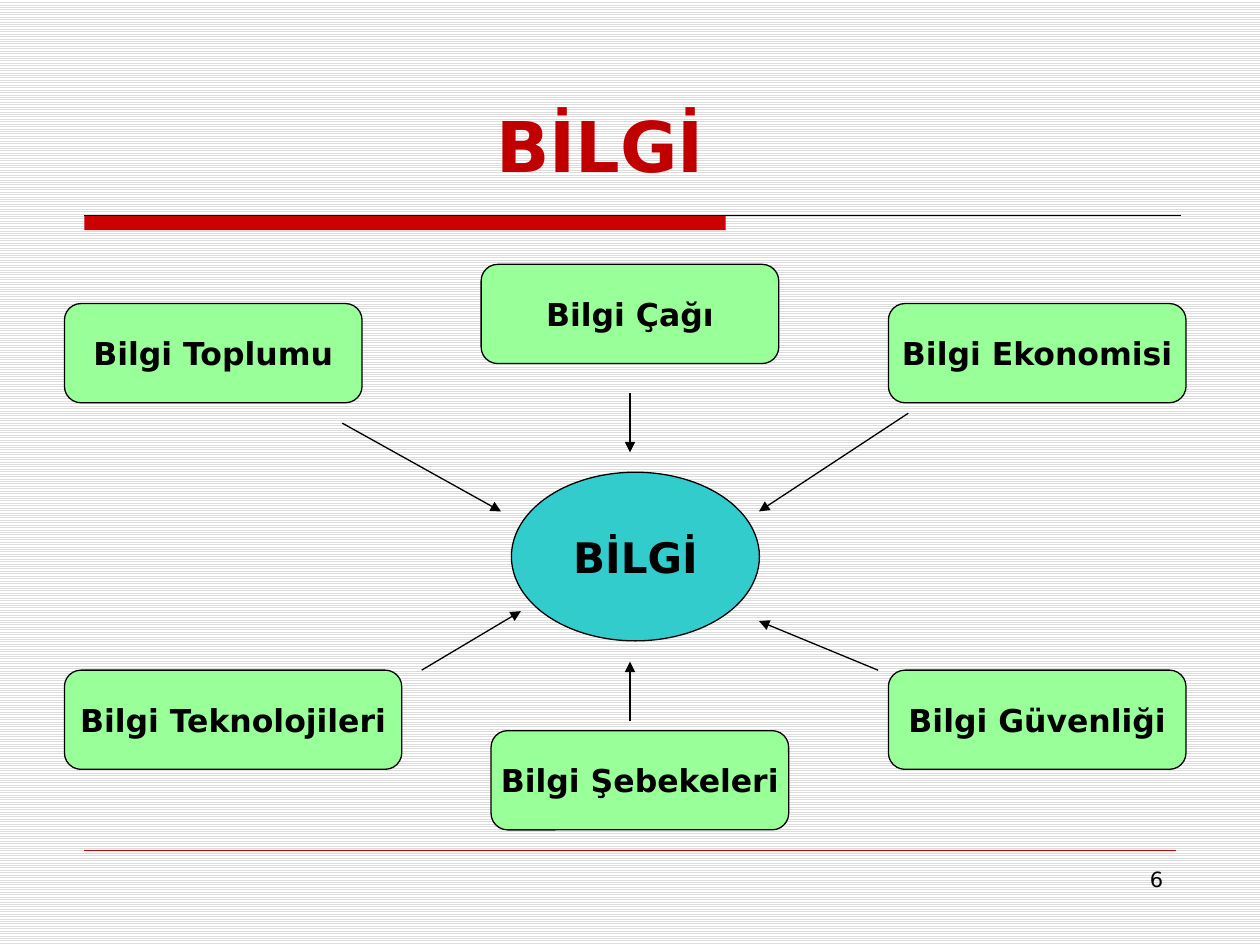
"""Builds the slide that links six information concepts to a central idea."""
from typing import NamedTuple

from lxml.etree import SubElement
from pptx import Presentation
from pptx.dml.color import RGBColor
from pptx.enum.dml import MSO_PATTERN
from pptx.enum.shapes import MSO_CONNECTOR, MSO_SHAPE
from pptx.enum.text import MSO_ANCHOR, PP_ALIGN
from pptx.oxml.ns import qn
from pptx.util import Cm, Pt

FONT = "DejaVu Sans"
COLORS = {
    "paper": "FFFFFF",
    "stripe": "DDDDDD",
    "accent": "CC0000",
    "title": "C00000",
    "concept": "99FF99",
    "core": "33CCCC",
    "ink": "000000",
}


class Node(NamedTuple):
    label: str
    left: float
    top: float
    width: float = 6.0
    height: float = 2.0
    shape: MSO_SHAPE = MSO_SHAPE.ROUNDED_RECTANGLE
    fill: str = "concept"
    size: int = 18


class Line(NamedTuple):
    start: tuple[float, float]
    end: tuple[float, float]
    color: str = "ink"
    weight: float = 0.75
    arrow: bool = True


LEFT, MIDDLE, RIGHT = 1.3, 12.7, 17.91
UPPER, LOWER = 6.12, 13.51
MARGIN = 1.7

NODES = [
    Node("Bilgi Toplumu", LEFT, UPPER),
    Node("Bilgi Çağı", 9.7, 5.33),
    Node("Bilgi Ekonomisi", RIGHT, UPPER),
    Node("Bilgi Teknolojileri", LEFT, LOWER, width=6.8),
    Node("Bilgi Şebekeleri", 9.9, 14.73),
    Node("Bilgi Güvenliği", RIGHT, LOWER),
    Node("BİLGİ", 10.31, 9.52, 5.0, 3.4, MSO_SHAPE.OVAL, "core", 24),
]
RULES = [
    Line((MARGIN, 4.34), (23.8, 4.34), arrow=False),
    Line((MARGIN, 17.15), (23.7, 17.15), "accent", 0.25, arrow=False),
]
ARROWS = [
    Line((6.9, 8.53), (10.1, 10.31)),
    Line((MIDDLE, 7.92), (MIDDLE, 9.12)),
    Line((18.31, 8.33), (15.3, 10.31)),
    Line((8.5, LOWER), (10.5, 12.32)),
    Line((MIDDLE, 14.53), (MIDDLE, 13.34)),
    Line((17.7, LOWER), (15.3, 12.52)),
]


def color(name: str) -> RGBColor:
    return RGBColor.from_string(COLORS[name])


def write(frame, text: str, size: int, align: PP_ALIGN, ink: str = "ink", bold: bool = True) -> None:
    paragraph = frame.paragraphs[0]
    paragraph.alignment = align
    span = paragraph.add_run()
    span.text = text
    span.font.name = FONT
    span.font.size = Pt(size)
    span.font.bold = bold
    span.font.color.rgb = color(ink)


def draw_line(page, line: Line) -> None:
    ends = [Cm(value) for value in (*line.start, *line.end)]
    connector = page.shapes.add_connector(MSO_CONNECTOR.STRAIGHT, *ends)
    connector.line.color.rgb = color(line.color)
    connector.line.width = Pt(line.weight)
    if line.arrow:
        SubElement(connector.line._get_or_add_ln(), qn("a:tailEnd"), type="triangle")
    SubElement(connector._element.spPr, qn("a:effectLst"))


def draw_node(page, node: Node) -> None:
    bounds = [Cm(value) for value in (node.left, node.top, node.width, node.height)]
    box = page.shapes.add_shape(node.shape, *bounds)
    box.shadow.inherit = False
    box.fill.solid()
    box.fill.fore_color.rgb = color(node.fill)
    box.line.color.rgb = color("ink")
    box.line.width = Pt(0.75)
    box.text_frame.word_wrap = False
    box.text_frame.vertical_anchor = MSO_ANCHOR.MIDDLE
    write(box.text_frame, node.label, node.size, PP_ALIGN.CENTER)


def draw_frame(page) -> None:
    backdrop = page.background.fill
    backdrop.patterned()
    backdrop.pattern = MSO_PATTERN.LIGHT_HORIZONTAL
    backdrop.fore_color.rgb = color("stripe")
    backdrop.back_color.rgb = color("paper")

    bar = page.shapes.add_shape(MSO_SHAPE.RECTANGLE, Cm(MARGIN), Cm(4.34), Cm(12.93), Cm(0.3))
    bar.shadow.inherit = False
    bar.fill.solid()
    bar.fill.fore_color.rgb = color("accent")
    bar.line.fill.background()
    for rule in RULES:
        draw_line(page, rule)

    number = page.shapes.add_textbox(Cm(18.2), Cm(17.35), Cm(5.5), Cm(1.32))
    number.text_frame.word_wrap = True
    write(number.text_frame, "6", 12, PP_ALIGN.RIGHT, bold=False)


def draw_title(page) -> None:
    title = page.shapes.title
    title.left, title.top, title.width, title.height = Cm(7.7), Cm(1.93), Cm(8.8), Cm(1.96)
    title.text_frame.vertical_anchor = MSO_ANCHOR.MIDDLE
    write(title.text_frame, "BİLGİ", 40, PP_ALIGN.CENTER, "title")


def main() -> None:
    deck = Presentation()
    deck.slide_width, deck.slide_height = Cm(25.4), Cm(19.05)
    page = deck.slides.add_slide(deck.slide_layouts.get_by_name("Title Only"))
    draw_frame(page)
    draw_title(page)
    for node in NODES:
        draw_node(page, node)
    for arrow in ARROWS:
        draw_line(page, arrow)
    deck.save("out.pptx")


if __name__ == "__main__":
    main()
